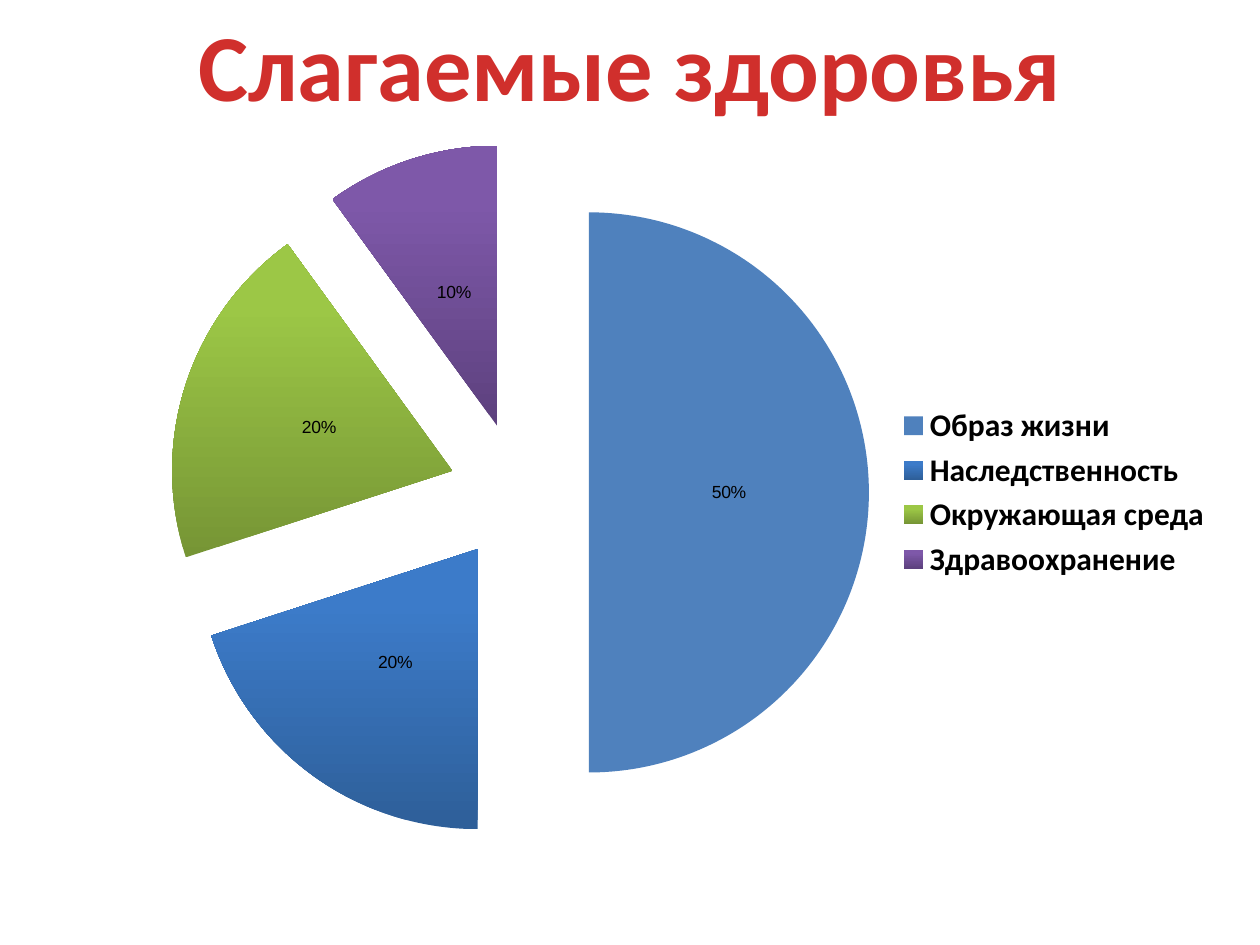
from dataclasses import dataclass
from typing import Optional

from pptx import Presentation
from pptx.chart.data import CategoryChartData
from pptx.dml.color import RGBColor
from pptx.enum.chart import XL_CHART_TYPE, XL_LABEL_POSITION, XL_LEGEND_POSITION
from pptx.enum.text import MSO_ANCHOR, MSO_AUTO_SIZE, PP_ALIGN
from pptx.util import Emu, Pt

PIE = XL_CHART_TYPE.PIE_EXPLODED
LEGEND_RIGHT = XL_LEGEND_POSITION.RIGHT
LABEL_CENTER = XL_LABEL_POSITION.CENTER
CENTER = PP_ALIGN.CENTER
MIDDLE = MSO_ANCHOR.MIDDLE
NO_AUTOFIT = MSO_AUTO_SIZE.NONE

EMU_PER_PX = 914400 // 126
TITLE_ONLY_LAYOUT = 5
SHADE_END = 0.8


@dataclass(frozen=True)
class HealthFactor:
    name: str
    share: float
    color: str
    shade: Optional[str] = None


FACTORS = [
    HealthFactor("Образ жизни", 0.5, "4F81BD"),
    HealthFactor("Наследственность", 0.2, "3C7BC9", "2E5F99"),
    HealthFactor("Окружающая среда", 0.2, "9CC746", "769535"),
    HealthFactor("Здравоохранение", 0.1, "7E58A9", "5D417E"),
]

TITLE_FONT = {"name": "Calibri", "size": Pt(54), "bold": True}
CHART_FONT = {"name": "Calibri", "size": Pt(18)}
LEGEND_FONT = {**CHART_FONT, "bold": True}
LABEL_FONT = {"name": "Arial", "size": Pt(10), "bold": False}


def px(length: int) -> Emu:
    return Emu(length * EMU_PER_PX)


def rgb(value: str) -> RGBColor:
    return RGBColor.from_string(value)


def format_font(font, values: dict, color: str) -> None:
    for attribute, value in values.items():
        setattr(font, attribute, value)
    font.color.rgb = rgb(color)


def fill_slice(fill, factor: HealthFactor) -> None:
    """Fill plainly, or from a dark shade at the bottom up to the main colour."""
    if factor.shade is None:
        fill.solid()
        fill.fore_color.rgb = rgb(factor.color)
        return
    fill.gradient()
    fill.gradient_angle = 90
    stops = [(0, factor.shade), (SHADE_END, factor.color)]
    for stop, (position, color) in zip(fill.gradient_stops, stops):
        stop.position = position
        stop.color.rgb = rgb(color)


def set_title(slide, text: str) -> None:
    title = slide.shapes.title
    title.left, title.top, title.width, title.height = map(px, (0, 0, 1260, 127))
    frame = title.text_frame
    frame.text = text
    frame.auto_size = NO_AUTOFIT
    frame.vertical_anchor = MIDDLE
    heading = frame.paragraphs[0]
    heading.alignment = CENTER
    format_font(heading.runs[0].font, TITLE_FONT, "D02F2C")


def add_factor_pie(slide, factors: list[HealthFactor]) -> None:
    data = CategoryChartData(number_format="0%")
    data.categories = [factor.name for factor in factors]
    data.add_series("Series 1", [factor.share for factor in factors])
    chart = slide.shapes.add_chart(PIE, *map(px, (144, 125, 1081, 735)), data).chart
    chart.has_title = False
    format_font(chart.font, CHART_FONT, "000000")

    chart.has_legend = True
    chart.legend.position = LEGEND_RIGHT
    chart.legend.include_in_layout = False
    format_font(chart.legend.font, LEGEND_FONT, "000000")

    plot = chart.plots[0]
    plot.vary_by_categories = True
    plot.has_data_labels = True
    labels = plot.data_labels
    labels.show_value = True
    labels.show_percentage = False
    labels.number_format = "0%"
    labels.number_format_is_linked = False
    labels.position = LABEL_CENTER
    format_font(labels.font, LABEL_FONT, "000000")

    for index, factor in enumerate(factors):
        fill_slice(plot.series[0].points[index].format.fill, factor)


def main() -> None:
    presentation = Presentation()
    presentation.slide_width = px(1260)
    presentation.slide_height = px(945)
    slide = presentation.slides.add_slide(presentation.slide_layouts[TITLE_ONLY_LAYOUT])
    add_factor_pie(slide, FACTORS)
    set_title(slide, "Слагаемые здоровья")
    presentation.save("out.pptx")


if __name__ == "__main__":
    main()
